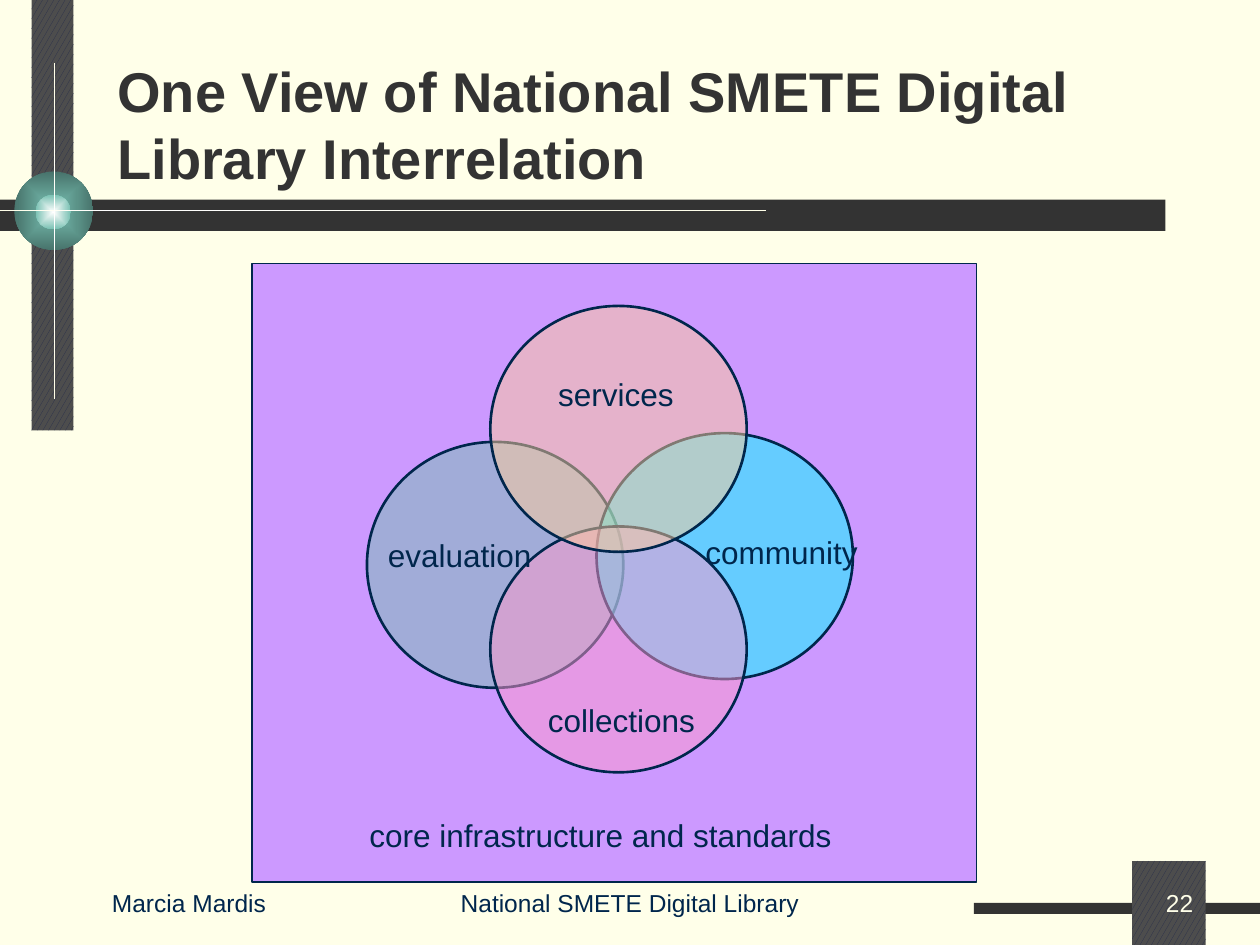
from lxml import etree
from pptx import Presentation
from pptx.dml.color import RGBColor
from pptx.enum.dml import MSO_PATTERN
from pptx.enum.shapes import MSO_SHAPE
from pptx.enum.text import MSO_ANCHOR, MSO_AUTO_SIZE, PP_ALIGN
from pptx.oxml.ns import qn
from pptx.util import Pt

RECT, OVAL = MSO_SHAPE.RECTANGLE, MSO_SHAPE.OVAL
LEFT, CENTER, RIGHT = PP_ALIGN.LEFT, PP_ALIGN.CENTER, PP_ALIGN.RIGHT
TOP, MIDDLE, BOTTOM = MSO_ANCHOR.TOP, MSO_ANCHOR.MIDDLE, MSO_ANCHOR.BOTTOM
CONFETTI = MSO_PATTERN.LARGE_CONFETTI
GROW = MSO_AUTO_SIZE.SHAPE_TO_FIT_TEXT

CREAM, WHITE, CHARCOAL, GRAY = "FFFFE9", "FFFFFF", "333333", "4D4D4D"
NAVY, SLATE, TEAL, DARK_TEAL = "00264C", "262D4C", "78C0B2", "48746C"


def color(value):
    return RGBColor.from_string(value)


def write(shape, text, size=18, ink=NAVY, bold=False, align=LEFT, anchor=TOP, wrap=True, grow=False):
    frame = shape.text_frame
    frame.word_wrap = wrap
    frame.vertical_anchor = anchor
    if grow:
        frame.auto_size = GROW
    para = frame.paragraphs[0]
    para.alignment = align
    span = para.add_run()
    span.text = text
    span.font.name = "Arial"
    span.font.size = Pt(size)
    span.font.bold = bold
    span.font.color.rgb = color(ink)


class SlideBuilder:
    def __init__(self, page, background):
        self.page = page
        self.shapes = page.shapes
        page.background.fill.solid()
        page.background.fill.fore_color.rgb = color(background)

    def start_group(self):
        self.shapes = self.page.shapes.add_group_shape().shapes

    def end_group(self):
        self.shapes = self.page.shapes

    def outline(self, kind, area, line=None, weight=0.75):
        shape = self.shapes.add_shape(kind, *map(Pt, area))
        shape.shadow.inherit = False
        if line:
            shape.line.color.rgb = color(line)
            shape.line.width = Pt(weight)
        else:
            shape.line.fill.background()
        return shape

    def solid(self, kind, area, fill, line=None, weight=0.75, alpha=None):
        shape = self.outline(kind, area, line, weight)
        shape.fill.solid()
        shape.fill.fore_color.rgb = color(fill)
        if alpha is not None:
            tint = shape.element.spPr.find(qn("a:solidFill"))[0]
            etree.SubElement(tint, qn("a:alpha"), val=str(alpha * 1000))
        return shape

    def textured(self, area):
        shape = self.outline(RECT, area)
        shape.fill.patterned()
        shape.fill.pattern = CONFETTI
        shape.fill.fore_color.rgb = color(SLATE)
        shape.fill.back_color.rgb = color(GRAY)
        return shape

    def gradient(self, kind, area, tints, angle=None):
        shape = self.outline(kind, area)
        shape.fill.background()
        properties = shape.element.spPr
        blend = etree.Element(qn("a:gradFill"), rotWithShape="1")
        stops = etree.SubElement(blend, qn("a:gsLst"))
        for index, tint in enumerate(tints):
            position = 100000 * index // (len(tints) - 1)
            stop = etree.SubElement(stops, qn("a:gs"), pos=str(position))
            etree.SubElement(stop, qn("a:srgbClr"), val=tint)
        if angle is None:
            center = etree.SubElement(blend, qn("a:path"), path="shape")
            etree.SubElement(center, qn("a:fillToRect"), l="50000", t="50000", r="50000", b="50000")
        else:
            etree.SubElement(blend, qn("a:lin"), ang=str(angle * 60000), scaled="1")
        properties.replace(properties.find(qn("a:noFill")), blend)

    def text(self, area, text, **style):
        box = self.shapes.add_textbox(*map(Pt, area))
        write(box, text, **style)


def draw_frame(slide):
    slide.solid(RECT, (0, 114, 666, 18), CHARCOAL)
    slide.textured((18, 0, 24, 246))
    slide.solid(RECT, (556.5, 516, 163.5, 6.2), CHARCOAL)
    slide.start_group()
    slide.gradient(OVAL, (8.2, 98, 45, 45), (TEAL, DARK_TEAL))
    slide.gradient(OVAL, (20.3, 111.3, 20.2, 19.8), (WHITE, TEAL))
    slide.gradient(RECT, (0, 120, 126, 0.75), (CREAM, WHITE, CREAM), angle=0)
    slide.gradient(RECT, (30.75, 36, 0.75, 192), (CREAM, WHITE, CREAM), angle=90)
    slide.gradient(RECT, (54, 120, 384, 0.75), (WHITE, CREAM), angle=0)
    slide.end_group()


def draw_diagram(slide):
    slide.start_group()
    slide.solid(RECT, (144, 150.6, 414, 353.4), "CC99FF", line=NAVY)
    circles = (
        (209.7, 252.5, TEAL),
        (340.9, 247.5, "00FFFF"),
        (280.2, 300.8, "FF99CC"),
        (280.2, 174.8, "FFCC99"),
    )
    for left, top, fill in circles:
        slide.solid(OVAL, (left, top, 146.5, 140.5), fill, line=NAVY, weight=1.5, alpha=50)
    labels = (
        (311.8, 211, 82, "services"),
        (306, 396.9, 102, "collections"),
        (396, 300.9, 102, "community"),
        (214.5, 302.5, 106, "evaluation"),
        (204, 463, 289.5, "core infrastructure and standards"),
    )
    for left, top, width, label in labels:
        slide.text((left, top, width, 28.8), label, grow=True)
    slide.end_group()


def main():
    deck = Presentation()
    deck.slide_width, deck.slide_height = Pt(720), Pt(540)
    slide = SlideBuilder(deck.slides.add_slide(deck.slide_layouts[6]), CREAM)
    draw_frame(slide)
    footer = {"size": 14, "align": CENTER, "anchor": BOTTOM}
    slide.text((246, 492, 228, 36), "National SMETE Digital Library", **footer)
    number = slide.textured((647, 492, 42, 48))
    write(number, "22", size=14, ink=CREAM, align=RIGHT, anchor=MIDDLE, wrap=False)
    slide.text((60, 22.5, 612, 90), "One View of National SMETE Digital Library Interrelation",
               size=32, ink=CHARCOAL, bold=True, anchor=BOTTOM)
    draw_diagram(slide)
    slide.text((42, 492, 132, 36), "Marcia Mardis", **footer)
    deck.save("out.pptx")


if __name__ == "__main__":
    main()
